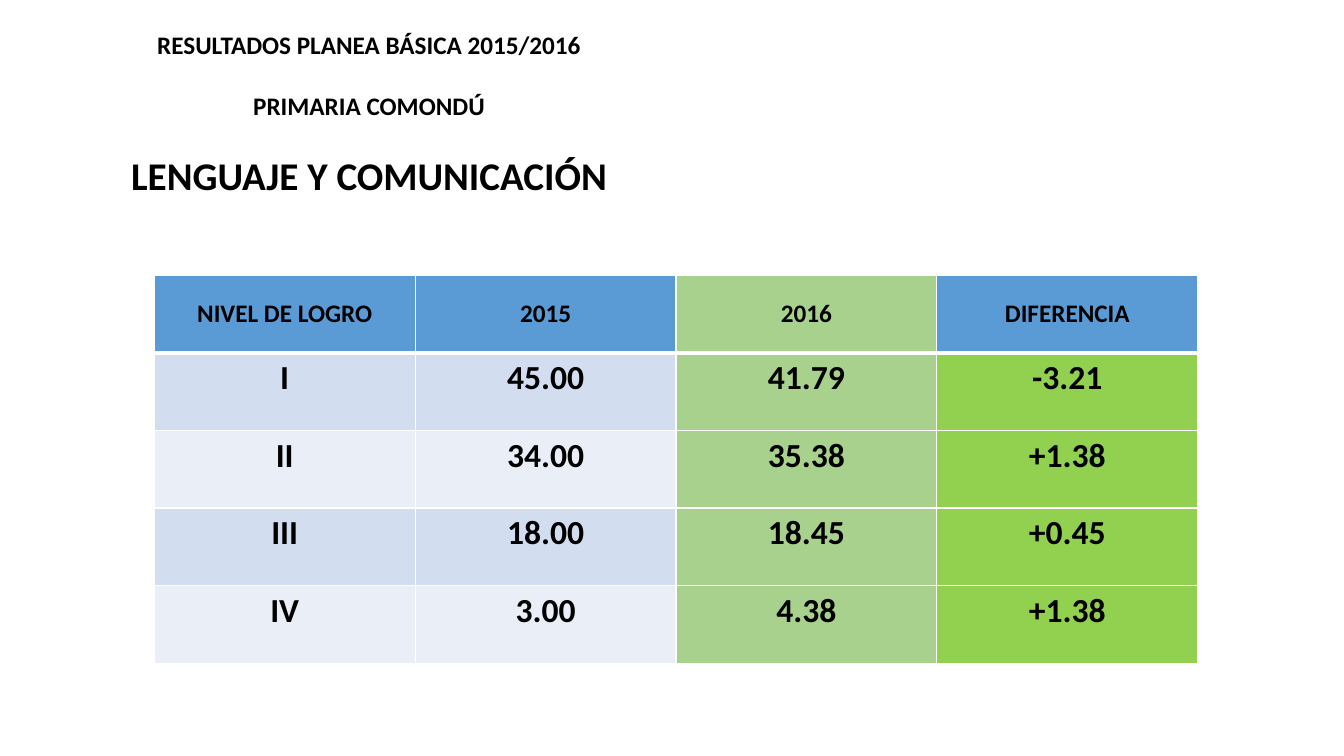
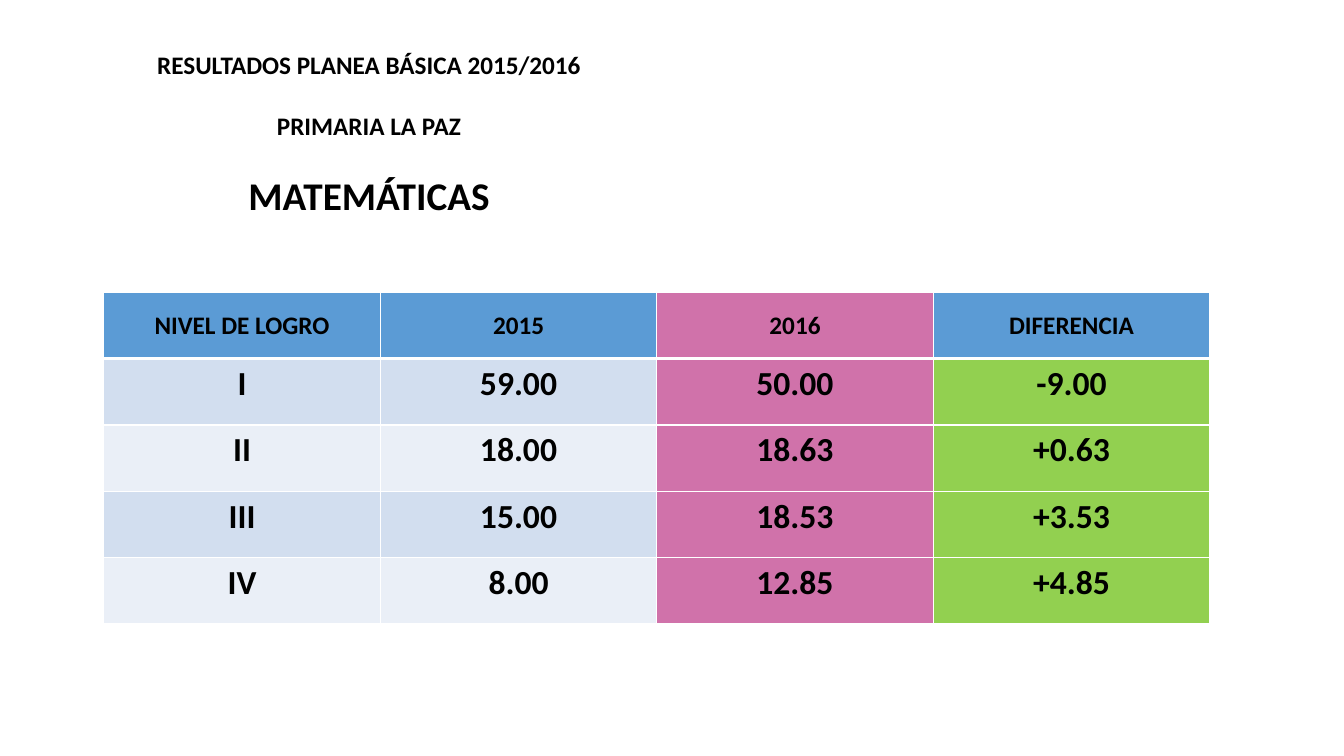
from lxml.etree import SubElement
from pptx import Presentation
from pptx.dml.color import RGBColor
from pptx.enum.text import MSO_ANCHOR as Anchor, MSO_AUTO_SIZE as AutoSize, PP_ALIGN as Align
from pptx.oxml.ns import qn
from pptx.util import Inches, Pt

FONT = "Calibri"
BLACK, WHITE = "000000", "FFFFFF"
HEADER_BLUE, DIFFERENCE_GREEN = "5B9BD5", "92D050"
BAND_FILLS = ("D2DEEF", "EAEFF7")
LABEL_SIZE, VALUE_SIZE, SUBJECT_SIZE = 18, 24, 28
TITLE_GAP = 22
HEADINGS = ("NIVEL DE LOGRO", "2015", "2016", "DIFERENCIA")
LEVELS = ("I", "II", "III", "IV")

RESULTS = (
    {
        "school": "PRIMARIA COMONDÚ",
        "subject": "LENGUAJE Y COMUNICACIÓN",
        "title_top": 0.24,
        "table_box": (1.53, 2.73, 10.35, 3.85),
        "accent": "A9D18E",
        "scores": ((45.00, 41.79), (34.00, 35.38), (18.00, 18.45), (3.00, 4.38)),
    },
    {
        "school": "PRIMARIA LA PAZ",
        "subject": "MATEMÁTICAS",
        "title_top": 0.44,
        "table_box": (1.03, 2.9, 10.97, 3.29),
        "accent": "D072AA",
        "scores": ((59.00, 50.00), (18.00, 18.63), (15.00, 18.53), (8.00, 12.85)),
    },
)


def color(hex_code):
    return RGBColor.from_string(hex_code)


def add_span(para, text, size):
    para.alignment = Align.CENTER
    span = para.add_run()
    span.text = text
    span.font.name = FONT
    span.font.size = Pt(size)
    span.font.bold = True
    span.font.color.rgb = color(BLACK)


def set_title(page, school, subject, top):
    title = page.shapes.title
    title.left, title.top = Inches(0.86), Inches(top)
    title.width, title.height = Inches(5.6), Inches(1.78)
    frame = title.text_frame
    frame.word_wrap = True
    frame.auto_size = AutoSize.NONE
    frame.vertical_anchor = Anchor.TOP
    lines = (
        ("RESULTADOS PLANEA BÁSICA 2015/2016", LABEL_SIZE),
        (school, LABEL_SIZE),
        (subject, SUBJECT_SIZE),
    )
    for index, (text, size) in enumerate(lines):
        para = frame.add_paragraph() if index else frame.paragraphs[0]
        para.line_spacing = 1.0
        para.space_before = Pt(TITLE_GAP if index else 0)
        add_span(para, text, size)


def set_borders(cell, top=1, bottom=1):
    properties = cell._tc.get_or_add_tcPr()
    for side, width in (("L", 1), ("R", 1), ("T", top), ("B", bottom)):
        line = SubElement(properties, qn(f"a:ln{side}"), w=str(Pt(width)))
        fill = SubElement(line, qn("a:solidFill"))
        SubElement(fill, qn("a:srgbClr"), val=WHITE)


def table_rows(scores):
    yield HEADINGS
    for level, (before, after) in zip(LEVELS, scores):
        yield level, f"{before:.2f}", f"{after:.2f}", f"{after - before:+.2f}"


def cell_fill(row, column, accent):
    if column == 2:
        return accent
    if row == 0:
        return HEADER_BLUE
    return DIFFERENCE_GREEN if column == 3 else BAND_FILLS[(row - 1) % 2]


def add_results_table(page, box, scores, accent):
    rows = list(table_rows(scores))
    left, top, width, height = map(Inches, box)
    table = page.shapes.add_table(len(rows), len(HEADINGS), left, top, width, height).table
    for row, texts in enumerate(rows):
        for column, text in enumerate(texts):
            cell = table.cell(row, column)
            set_borders(cell, top=3 if row == 1 else 1, bottom=3 if row == 0 else 1)
            cell.fill.solid()
            cell.fill.fore_color.rgb = color(cell_fill(row, column, accent))
            cell.vertical_anchor = Anchor.TOP if row else Anchor.MIDDLE
            add_span(cell.text_frame.paragraphs[0], text, VALUE_SIZE if row else LABEL_SIZE)


def main():
    deck = Presentation()
    deck.slide_width, deck.slide_height = Inches(13.33), Inches(7.5)
    title_only = deck.slide_layouts[5]
    for result in RESULTS:
        page = deck.slides.add_slide(title_only)
        add_results_table(page, result["table_box"], result["scores"], result["accent"])
        set_title(page, result["school"], result["subject"], result["title_top"])
    deck.save("out.pptx")


if __name__ == "__main__":
    main()
